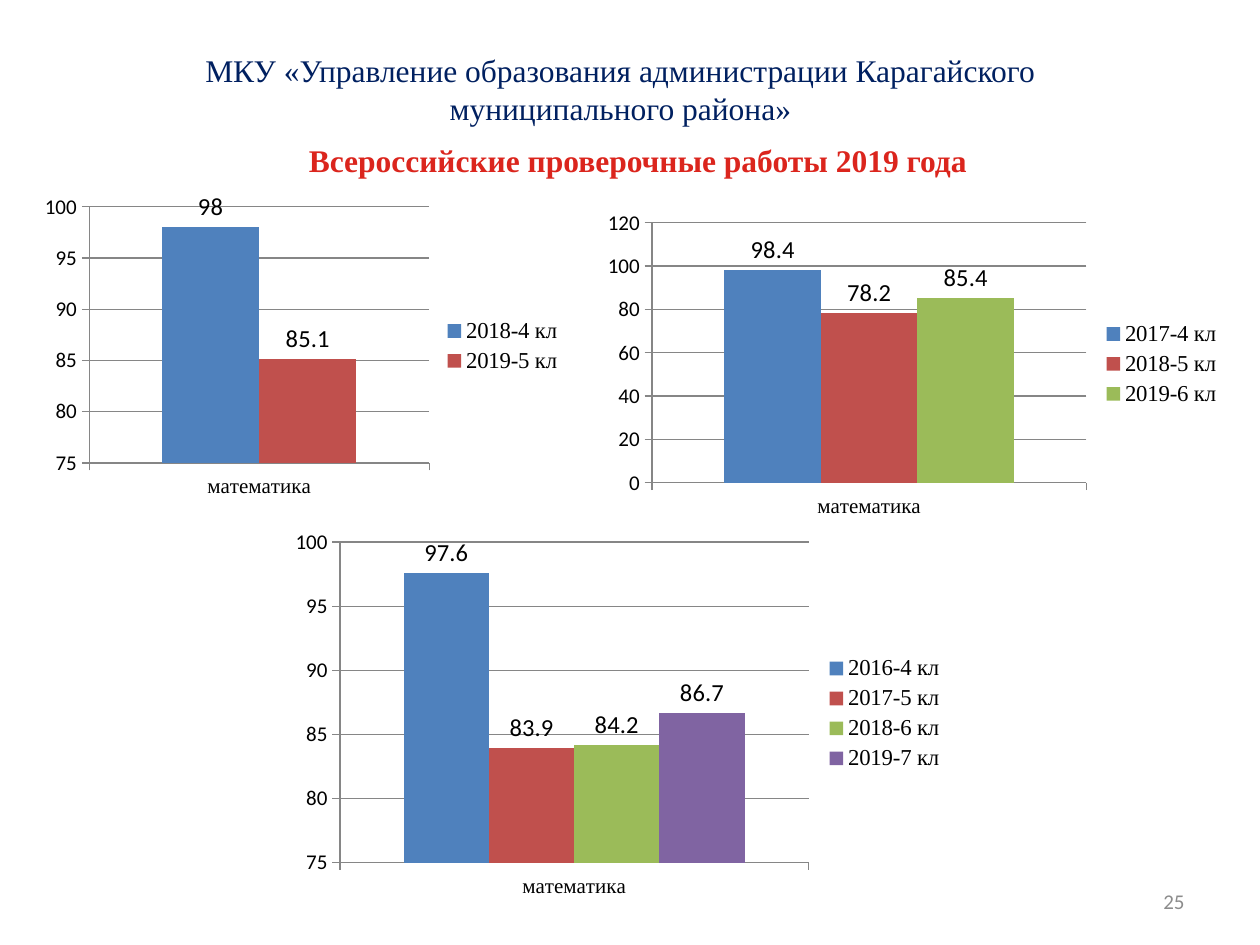
"""Build a slide with three column charts of school test results."""
from dataclasses import dataclass

from pptx import Presentation
from pptx.chart.data import CategoryChartData as Data
from pptx.dml.color import RGBColor as Rgb
from pptx.enum.chart import XL_CHART_TYPE as Kind
from pptx.enum.chart import XL_LABEL_POSITION as Spot
from pptx.enum.chart import XL_LEGEND_POSITION as Side
from pptx.enum.chart import XL_TICK_MARK as Tick
from pptx.enum.text import MSO_ANCHOR as Anchor
from pptx.enum.text import MSO_AUTO_SIZE as Fit
from pptx.enum.text import PP_ALIGN as Align
from pptx.util import Emu, Pt


@dataclass(frozen=True)
class Theme:
    navy: str = "002060"
    red: str = "DB251D"
    gray: str = "8C8C8C"
    rule: str = "868686"
    black: str = "000000"
    bars: tuple = ("4F81BD", "C0504D", "9BBB59", "8064A2")
    serif: str = "Times New Roman"
    sans: str = "Calibri"
    head: int = 18
    label: int = 14
    key: int = 13
    small: int = 12


T = Theme()
SCALE = 914400 / 126


def px(*nums):
    return [Emu(round(n * SCALE)) for n in nums]


def write(shape, text, box, size=T.head, face=T.serif, color=T.black,
          bold=False, align=Align.CENTER, anchor=Anchor.TOP):
    shape.left, shape.top, shape.width, shape.height = px(*box)
    frame = shape.text_frame
    frame.word_wrap = True
    frame.auto_size = Fit.NONE
    frame.vertical_anchor = anchor
    para = frame.paragraphs[0]
    para.alignment = align
    run = para.add_run()
    run.text = text
    font = run.font
    font.size, font.name, font.bold = Pt(size), face, bold
    font.color.rgb = Rgb.from_string(color)


deck = Presentation()
deck.slide_width, deck.slide_height = px(1260, 945)
slide = deck.slides.add_slide(deck.slide_layouts[5])
shapes = slide.shapes

write(shapes.title,
      "МКУ «Управление образования администрации Карагайского муниципального района»",
      (134, 45, 973, 89), color=T.navy)
write(shapes.add_textbox(0, 0, 0, 0), "Всероссийские проверочные работы 2019 года",
      (87, 135, 1102, 50), color=T.red, bold=True)
write(shapes.add_textbox(0, 0, 0, 0), "25", (903, 876, 294, 50), size=T.small,
      face=T.sans, color=T.gray, align=Align.RIGHT, anchor=Anchor.MIDDLE)

# box, first year, results by grade from 4 up, axis low, high and step
charts = [
    ((282, 522, 675, 383), 2016, (97.6, 83.9, 84.2, 86.7), (75, 100, 5)),
    ((34, 188, 541, 316), 2018, (98, 85.1), (75, 100, 5)),
    ((595, 204, 639, 320), 2017, (98.4, 78.2, 85.4), (0, 120, 20)),
]

for box, year, marks, (low, high, step) in charts:
    data = Data()
    data.categories = ["математика"]
    for i, mark in enumerate(marks):
        data.add_series(f"{year + i}-{4 + i} кл", [mark])
    chart = shapes.add_chart(Kind.COLUMN_CLUSTERED, *px(*box), data).chart
    chart.has_title = False
    chart.font.size, chart.font.name = Pt(T.head), T.sans
    chart.font.color.rgb = Rgb.from_string(T.black)

    chart.has_legend = True
    legend = chart.legend
    legend.position, legend.include_in_layout = Side.RIGHT, False
    legend.font.size, legend.font.name = Pt(T.key), T.serif

    cat, val = chart.category_axis, chart.value_axis
    val.minimum_scale, val.maximum_scale, val.major_unit = low, high, step
    val.has_major_gridlines = True
    for axis, face in ((cat, T.serif), (val, T.sans)):
        axis.major_tick_mark, axis.minor_tick_mark = Tick.OUTSIDE, Tick.NONE
        axis.tick_labels.font.size = Pt(T.small)
        axis.tick_labels.font.name = face
    for part in (cat, val, val.major_gridlines):
        part.format.line.color.rgb = Rgb.from_string(T.rule)
        part.format.line.width = Pt(0.75)

    plot = chart.plots[0]
    plot.gap_width, plot.overlap, plot.vary_by_categories = 150, 0, False
    for bar, color in zip(plot.series, T.bars):
        bar.format.fill.solid()
        bar.format.fill.fore_color.rgb = Rgb.from_string(color)
        tags = bar.data_labels
        tags.show_value, tags.position = True, Spot.OUTSIDE_END
        tags.font.size = Pt(T.label)

deck.save("out.pptx")
